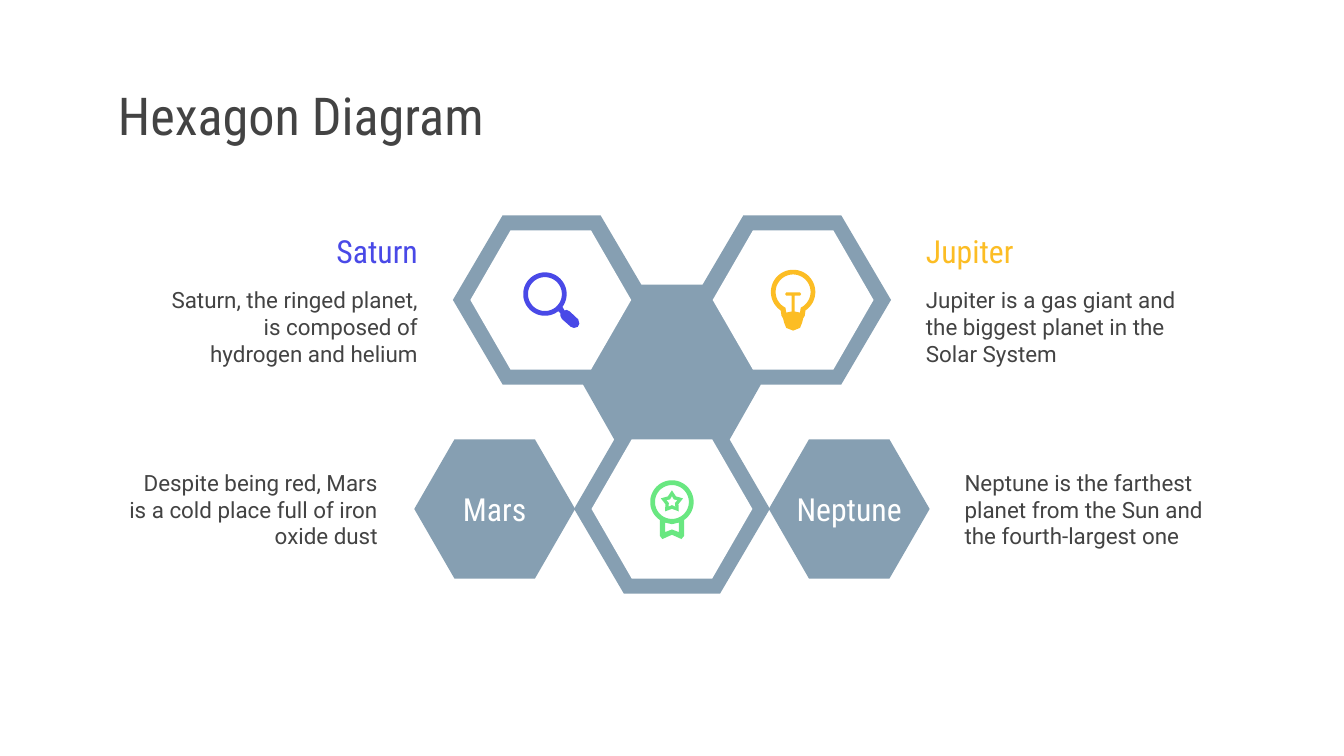
"""Build a slide with a honeycomb diagram of four planets."""
from dataclasses import dataclass
from math import cos, radians, sin

from pptx import Presentation
from pptx.dml.color import RGBColor
from pptx.enum.text import MSO_ANCHOR, MSO_AUTO_SIZE, PP_ALIGN
from pptx.shapes.freeform import FreeformBuilder
from pptx.shapes.autoshape import Shape
from pptx.slide import Slide
from pptx.util import Cm, Pt

Point = tuple[float, float]
Outline = list[Point]

SLATE = RGBColor(0x86, 0x9F, 0xB2)
WHITE = RGBColor(0xFF, 0xFF, 0xFF)
CHARCOAL = RGBColor(0x43, 0x43, 0x43)
BLUE = RGBColor(0x49, 0x49, 0xE7)
AMBER = RGBColor(0xFC, 0xBD, 0x24)
GREEN = RGBColor(0x69, 0xE7, 0x81)
HEADING_FONT, BODY_FONT = "Roboto Condensed", "Roboto"

CENTER_X = 12.7
UPPER_Y, LOWER_Y = 5.67, 9.62
CELL_RADIUS = 1.52
CAPTION_WIDTH = 5.23


@dataclass(frozen=True)
class Cell:
    x: float
    y: float
    fill: RGBColor
    label: str = ""


@dataclass(frozen=True)
class Caption:
    text: str
    left: float
    top: float
    align: PP_ALIGN
    height: float = 2.13
    size: int = 12
    font: str = BODY_FONT
    color: RGBColor = CHARCOAL


@dataclass(frozen=True)
class Icon:
    outlines: list[Outline]
    color: RGBColor


def arc(x: float, y: float, radius: float, start: int = 0, end: int = 360, step: int = 4) -> Outline:
    return [(x + radius * cos(radians(a)), y + radius * sin(radians(a)))
            for a in range(start, end, step)]


def star(x: float, y: float, outer: float, inner: float) -> Outline:
    tips = arc(x, y, outer, -90, 270, 72)
    notches = arc(x, y, inner, -54, 306, 72)
    return [point for pair in zip(tips, notches) for point in pair]


def mirrored(points: Outline, axis: float) -> Outline:
    return points + [(2 * axis - x, y) for x, y in reversed(points)]


def draw_outlines(slide: Slide, outlines: list[Outline], fill: RGBColor) -> Shape:
    builder: FreeformBuilder | None = None
    for outline in outlines:
        start, *rest = [(Cm(x), Cm(y)) for x, y in outline]
        if builder is None:
            builder = slide.shapes.build_freeform(*start)
        else:
            builder.move_to(*start)
        builder.add_line_segments(rest, close=True)
    shape = builder.convert_to_shape()
    shape.shadow.inherit = False
    shape.fill.solid()
    shape.fill.fore_color.rgb = fill
    shape.line.fill.background()
    return shape


def write(shape: Shape, text: str, font: str, size: int, color: RGBColor, align: PP_ALIGN) -> None:
    frame = shape.text_frame
    frame.word_wrap = True
    frame.auto_size = MSO_AUTO_SIZE.NONE
    frame.vertical_anchor = MSO_ANCHOR.MIDDLE
    frame.margin_left = frame.margin_right = frame.margin_top = frame.margin_bottom = Cm(0.25)
    frame.text = text
    paragraph = frame.paragraphs[0]
    paragraph.alignment = align
    paragraph.font.name = font
    paragraph.font.size = Pt(size)
    paragraph.font.color.rgb = color


def draw_cell(slide: Slide, cell: Cell) -> None:
    hexagon = draw_outlines(slide, [arc(cell.x, cell.y, CELL_RADIUS, step=60)], cell.fill)
    if cell.label:
        write(hexagon, cell.label, HEADING_FONT, 17, WHITE, PP_ALIGN.CENTER)


def draw_caption(slide: Slide, caption: Caption) -> None:
    box = slide.shapes.add_textbox(
        Cm(caption.left), Cm(caption.top), Cm(CAPTION_WIDTH), Cm(caption.height))
    write(box, caption.text, caption.font, caption.size, caption.color, caption.align)


def heading(text: str, left: float, align: PP_ALIGN, color: RGBColor) -> Caption:
    return Caption(text, left, 4.14, align, 1.19, 17, HEADING_FONT, color)


HONEYCOMB = mirrored([
    (11.79, 11.22), (10.85, 9.62), (11.61, 8.31), (11.02, 7.27), (9.5, 7.27),
    (8.56, 5.67), (9.5, 4.07), (11.35, 4.07), (12.12, 5.38)], CENTER_X)

CELLS = [
    Cell(10.41, UPPER_Y, WHITE),
    Cell(14.99, UPPER_Y, WHITE),
    Cell(CENTER_X, LOWER_Y, WHITE),
    Cell(9.35, LOWER_Y, SLATE, "Mars"),
    Cell(16.05, LOWER_Y, SLATE, "Neptune"),
]

CAPTIONS = [
    heading("Saturn", 2.92, PP_ALIGN.RIGHT, BLUE),
    Caption("Saturn, the ringed planet, is composed of hydrogen and helium",
            2.92, 5.11, PP_ALIGN.RIGHT),
    heading("Jupiter", 17.25, PP_ALIGN.LEFT, AMBER),
    Caption("Jupiter is a gas giant and the biggest planet in the Solar System",
            17.25, 5.11, PP_ALIGN.LEFT),
    Caption("Despite being red, Mars is a cold place full of iron oxide dust",
            2.16, 8.56, PP_ALIGN.RIGHT),
    Caption("Neptune is the farthest planet from the Sun and the fourth-largest one",
            17.98, 8.56, PP_ALIGN.LEFT),
]

MAGNIFIER = Icon([
    arc(10.3, 5.56, 0.41, 52, 400) + [
        (10.67, 5.87), (10.71, 5.86), (10.77, 5.89), (10.93, 6.04), (10.95, 6.12), (10.92, 6.18),
        (10.85, 6.2), (10.79, 6.18), (10.62, 6.03), (10.59, 5.97), (10.59, 5.92)],
    arc(10.3, 5.56, 0.32),
], BLUE)

BULB = Icon([
    arc(14.99, 5.52, 0.42, 124, 417) + mirrored(
        [(15.21, 5.97), (15.18, 6.02), (15.16, 6.1), (15.12, 6.2), (14.99, 6.25)], 14.99),
    arc(14.99, 5.52, 0.33, 116, 425) + mirrored(
        [(15.12, 5.91), (15.02, 5.89), (15.02, 5.59), (15.12, 5.59), (15.14, 5.56),
         (15.12, 5.53)], 14.99),
], AMBER)

BADGE = Icon([
    arc(CENTER_X, 9.49, 0.41, 124, 417) + mirrored(
        [(12.93, 10.13), (12.88, 10.19), (12.7, 10.11)], CENTER_X),
    arc(CENTER_X, 9.49, 0.32),
    star(CENTER_X, 9.49, 0.22, 0.13),
    star(CENTER_X, 9.49, 0.11, 0.06),
    mirrored([(12.7, 9.91), (12.83, 9.88), (12.83, 10.06), (12.7, 10.01)], CENTER_X),
], GREEN)


def main() -> None:
    presentation = Presentation()
    presentation.slide_width, presentation.slide_height = Cm(25.4), Cm(14.29)
    slide = presentation.slides.add_slide(presentation.slide_layouts[5])

    title = slide.shapes.title
    title.left, title.top, title.width, title.height = Cm(1.98), Cm(1.5), Cm(21.46), Cm(1.35)
    write(title, "Hexagon Diagram", HEADING_FONT, 28, CHARCOAL, PP_ALIGN.LEFT)

    draw_outlines(slide, [HONEYCOMB], SLATE)
    for cell in CELLS:
        draw_cell(slide, cell)
    for caption in CAPTIONS:
        draw_caption(slide, caption)
    for icon in (MAGNIFIER, BULB, BADGE):
        draw_outlines(slide, icon.outlines, icon.color)

    presentation.save("out.pptx")


if __name__ == "__main__":
    main()
